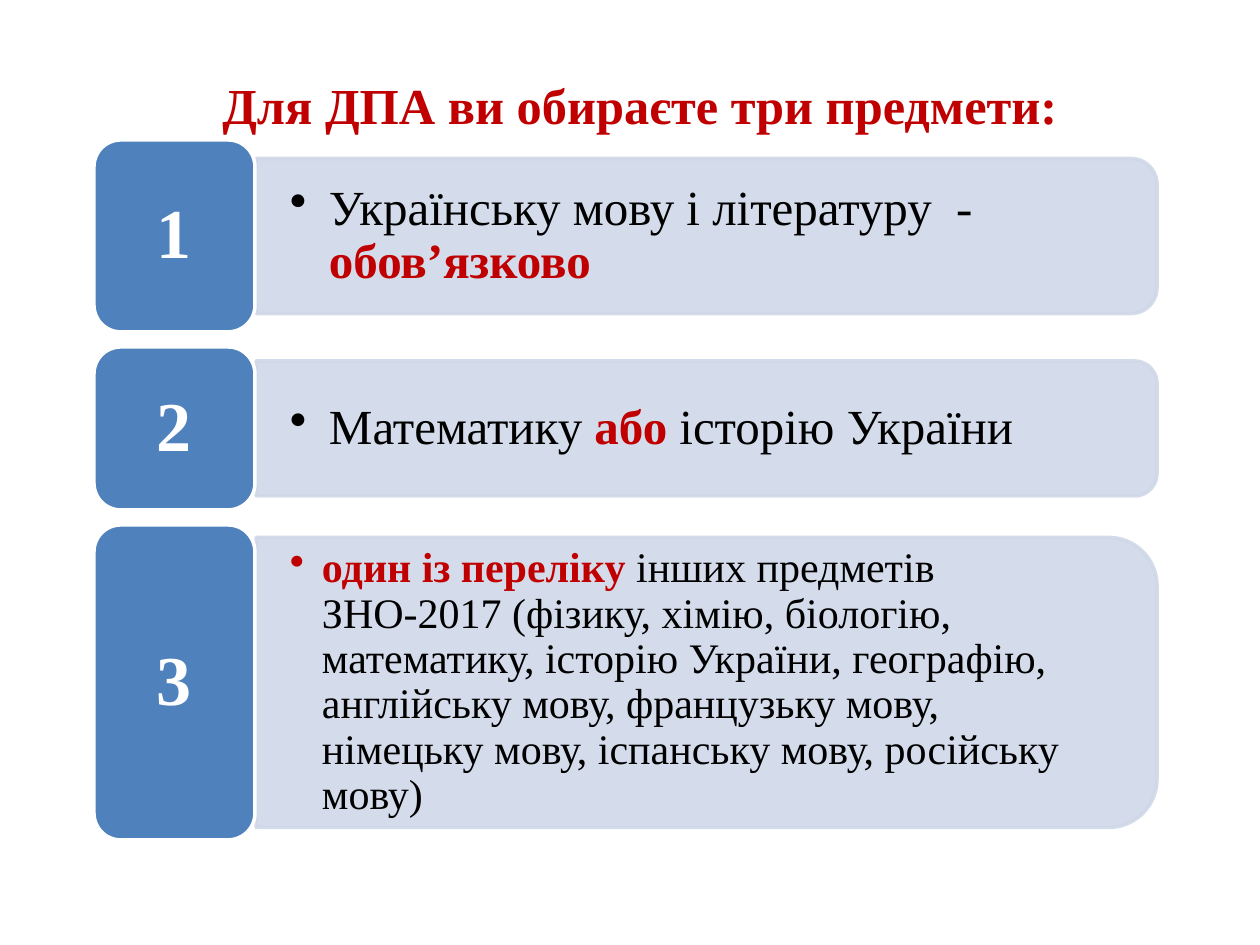
import pptx
import pptx.dml.color
import pptx.enum.shapes
import pptx.enum.text
import pptx.oxml
import pptx.oxml.ns
import pptx.util
from lxml import etree

COLORS = {"red": "C00000", "black": "000000", "white": "FFFFFF",
          "badge": "4F81BD", "panel": "D0D8E8"}
FONT = "Times New Roman"
TITLE = "Для ДПА ви обираєте три предмети:"
# Badge height, panel height, text size, bullet indent, runs of (text, emphasised)
SUBJECTS = [
    (192, 155, 28, 39, [("Українську мову і літературу  - ", False),
                        ("обов’язково", True)]),
    (163, 135, 28, 39, [("Математику ", False), ("або", True),
                        (" історію України", False)]),
    (315, 290, 24, 32, [("один із переліку ", True),
                        ("інших предметів ЗНО-2017 (фізику, хімію, біологію, "
                         "математику, історію України, географію, англійську мову, "
                         "французьку мову, німецьку мову, іспанську мову, "
                         "російську мову)", False)]),
]
TOP, GAP = 140, 15
BADGE_LEFT, BADGE_WIDTH = 94, 161
PANEL_LEFT, PANEL_WIDTH = 256, 901
CORNER_INSET = 0.05  # share of the panel height taken by its rounded corners


def px(length):
    return pptx.util.Emu(round(length * 914400 / 126))


def color(name):
    return pptx.dml.color.RGBColor.from_string(COLORS[name])


def format_font(font, size, color_name, bold):
    font.name, font.size, font.bold = FONT, pptx.util.Pt(size), bold
    font.color.rgb = color(color_name)


def prepare_frame(frame, inset_x, inset_y):
    frame.word_wrap = True
    frame.auto_size = pptx.enum.text.MSO_AUTO_SIZE.NONE
    frame.vertical_anchor = pptx.enum.text.MSO_ANCHOR.MIDDLE
    frame.margin_left = frame.margin_right = px(inset_x)
    frame.margin_top = frame.margin_bottom = px(inset_y)


def add_shape(slide, kind, box, fill, line):
    shape = slide.shapes.add_shape(kind, *map(px, box))
    shape.shadow.inherit = False
    shape.fill.solid()
    shape.fill.fore_color.rgb = color(fill)
    shape.line.color.rgb = color(line)
    shape.line.width = pptx.util.Pt(2)
    return shape


def add_panel(slide, middle, height):
    """Add a panel rounded on the right: a top-rounded shape turned by 90°."""
    center = PANEL_LEFT + PANEL_WIDTH / 2
    box = (center - height / 2, middle - PANEL_WIDTH / 2, height, PANEL_WIDTH)
    kind = pptx.enum.shapes.MSO_SHAPE.ROUND_2_SAME_RECTANGLE
    panel = add_shape(slide, kind, box, "panel", "panel")
    panel.rotation = 90
    for fill_color in panel._element.spPr.iter(pptx.oxml.ns.qn("a:srgbClr")):
        etree.SubElement(fill_color, pptx.oxml.ns.qn("a:alpha"), val="90000")


def add_bullet(paragraph, indent):
    properties = paragraph._p.get_or_add_pPr()
    properties.set("marL", str(px(indent)))
    properties.set("indent", str(-px(indent)))
    etree.SubElement(properties, pptx.oxml.ns.qn("a:buChar"), char="•")


def add_subject_text(slide, middle, panel_height, size, indent, runs):
    inset = panel_height * CORNER_INSET
    height = panel_height - 2 * inset
    box = slide.shapes.add_textbox(px(PANEL_LEFT), px(middle - height / 2),
                                   px(PANEL_WIDTH - inset), px(height))
    prepare_frame(box.text_frame, 34, 18)
    paragraph = box.text_frame.paragraphs[0]
    add_bullet(paragraph, indent)
    paragraph.line_spacing = 0.9
    for text, emphasised in runs:
        run = paragraph.add_run()
        run.text = text
        format_font(run.font, size, "red" if emphasised else "black", emphasised)


def add_badge(slide, top, height, number):
    badge = add_shape(slide, pptx.enum.shapes.MSO_SHAPE.ROUNDED_RECTANGLE,
                      (BADGE_LEFT, top, BADGE_WIDTH, height), "badge", "white")
    prepare_frame(badge.text_frame, 21, 10)
    badge.text_frame.text = str(number)
    paragraph = badge.text_frame.paragraphs[0]
    paragraph.alignment = pptx.enum.text.PP_ALIGN.CENTER
    paragraph.line_spacing = 0.9
    format_font(paragraph.runs[0].font, 40, "white", True)


def add_title(slide):
    title = slide.shapes.title
    title.left, title.top, title.width, title.height = map(px, (144, 66, 992, 77))
    prepare_frame(title.text_frame, 12, 6)
    title.text_frame.text = TITLE
    paragraph = title.text_frame.paragraphs[0]
    paragraph.alignment = pptx.enum.text.PP_ALIGN.CENTER
    format_font(paragraph.runs[0].font, 28.8, "red", True)


def main():
    presentation = pptx.Presentation()
    presentation.slide_width, presentation.slide_height = px(1260), px(945)
    slide = presentation.slides.add_slide(presentation.slide_layouts[5])
    add_title(slide)
    top = TOP
    for number, subject in enumerate(SUBJECTS, start=1):
        badge_height, panel_height, size, indent, runs = subject
        middle = top + badge_height / 2
        add_panel(slide, middle, panel_height)
        add_subject_text(slide, middle, panel_height, size, indent, runs)
        add_badge(slide, top, badge_height, number)
        top += badge_height + GAP
    presentation.save("out.pptx")


if __name__ == "__main__":
    main()
